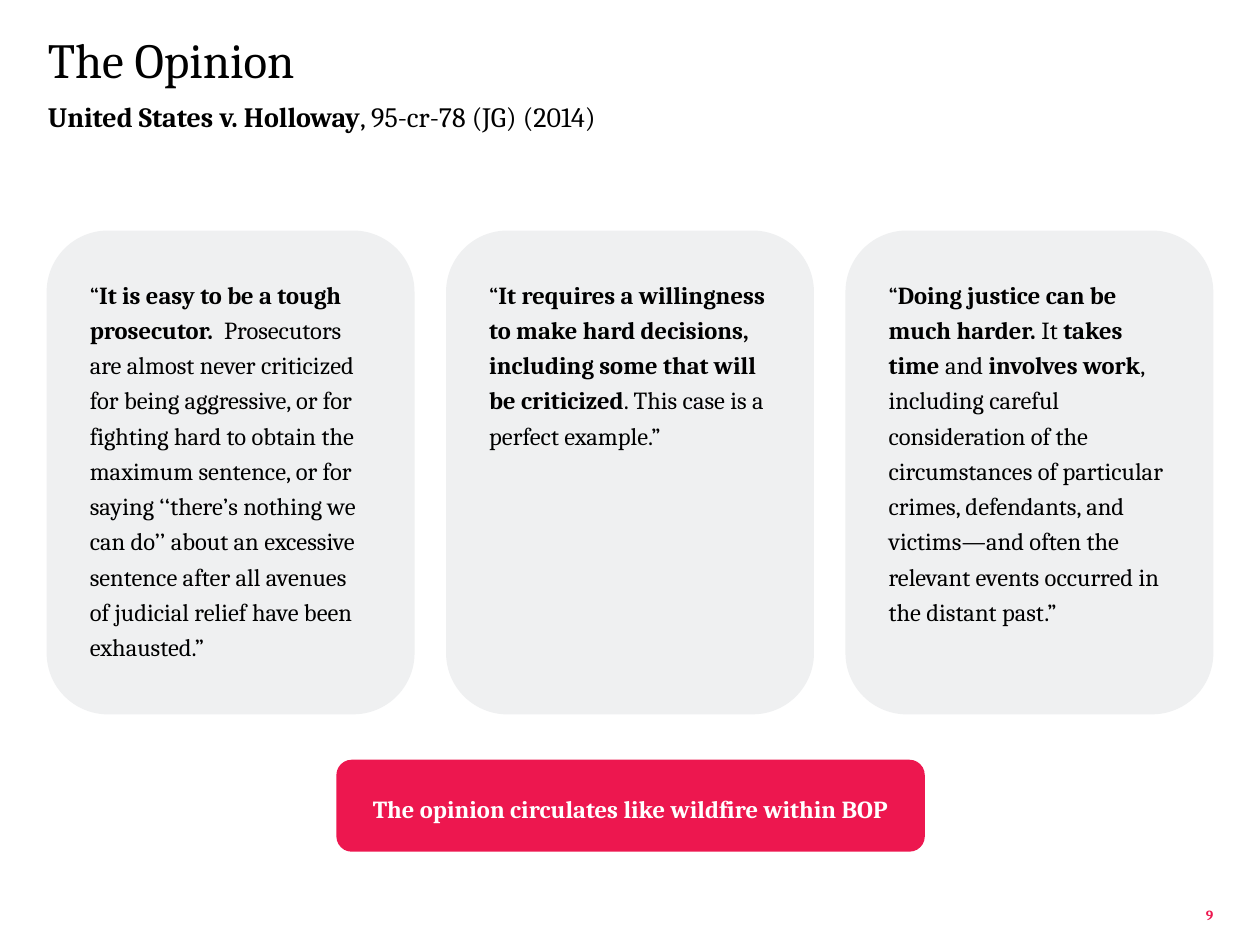
from pptx import Presentation
from pptx.dml.color import RGBColor
from pptx.enum.shapes import MSO_SHAPE as SHAPE
from pptx.enum.text import MSO_ANCHOR as ANCHOR, MSO_AUTO_SIZE as AUTO_SIZE, PP_ALIGN as ALIGN
from pptx.util import Emu, Pt

PX = 9144  # 100 px to the inch
FONT = "Cambria"
BLACK, WHITE, RED, GREY = "000000", "FFFFFF", "ED174F", "EFF0F1"

QUOTES = [
    "“**It is easy to be a tough prosecutor.  **Prosecutors are almost never "
    "criticized for being aggressive, or for fighting hard to obtain the maximum "
    "sentence, or for saying ‘‘there’s nothing we can do’’ about an excessive "
    "sentence after all avenues of judicial relief have been exhausted.”",
    "“**It requires a willingness to make hard decisions, including some that "
    "will be criticized**. This case is a perfect example.”",
    "“**Doing justice can be much harder. **It **takes time **and **involves work**, "
    "including careful consideration of the circumstances of particular crimes, "
    "defendants, and victims—and often the relevant events occurred in the "
    "distant past.”",
]


def rgb(value):
    return RGBColor.from_string(value)


class SlideBuilder:
    def __init__(self, slide):
        self.slide = slide

    def box(self, *lengths):
        return [Emu(n * PX) for n in lengths]

    def set_text(self, sp, text, size, color=BLACK, align=ALIGN.LEFT, anchor=ANCHOR.TOP,
                 inset=0, spacing=1.2, after=0, wrap=True):
        """Fill a shape with one paragraph; ** switches bold on and off."""
        tf = sp.text_frame
        tf.word_wrap = wrap
        tf.auto_size = AUTO_SIZE.NONE
        tf.vertical_anchor = anchor
        tf.margin_left = tf.margin_top = tf.margin_right = tf.margin_bottom = Emu(inset * PX)
        p = tf.paragraphs[0]
        p.alignment, p.line_spacing = align, spacing
        p.space_before, p.space_after = Pt(0), Pt(after)
        for i, part in enumerate(text.split("**")):
            if part:
                r = p.add_run()
                r.text = part
                r.font.name, r.font.size, r.font.bold = FONT, Pt(size), i % 2 == 1
                r.font.color.rgb = rgb(color)

    def title(self, x, y, w, h, text):
        sp = self.slide.shapes.title
        sp.left, sp.top, sp.width, sp.height = self.box(x, y, w, h)
        self.set_text(sp, text, 28, spacing=0.9)

    def text(self, x, y, w, h, text, size, **style):
        sp = self.slide.shapes.add_textbox(*self.box(x, y, w, h))
        self.set_text(sp, text, size, **style)

    def card(self, x, y, w, h, fill, text, **style):
        sp = self.slide.shapes.add_shape(SHAPE.ROUNDED_RECTANGLE, *self.box(x, y, w, h))
        sp.shadow.inherit = False
        sp.fill.solid()
        sp.fill.fore_color.rgb = rgb(fill)
        sp.line.fill.background()
        self.set_text(sp, text, 14, inset=20, after=12, **style)


def main():
    prs = Presentation()
    prs.slide_width, prs.slide_height = Emu(1000 * PX), Emu(750 * PX)
    s = SlideBuilder(prs.slides.add_slide(prs.slide_layouts[5]))

    s.text(935, 712, 28, 21, "**9**", 8, color=RED, align=ALIGN.RIGHT,
           anchor=ANCHOR.BOTTOM, spacing=0.9)
    s.title(38, 29, 925, 42, "The Opinion")

    left, width, gap = 37, 292, 25
    for i, quote in enumerate(QUOTES):
        s.card(left + i * (width + gap), 183, width, 384, GREY, quote)

    s.text(38, 74, 925, 29, "**United States v. Holloway**, 95-cr-78 (JG) (2014)", 16, after=8)
    s.card(267, 603, 467, 73, RED, "**The opinion circulates like wildfire within BOP**",
           color=WHITE, align=ALIGN.CENTER, anchor=ANCHOR.MIDDLE, wrap=False)
    prs.save("out.pptx")


if __name__ == "__main__":
    main()
